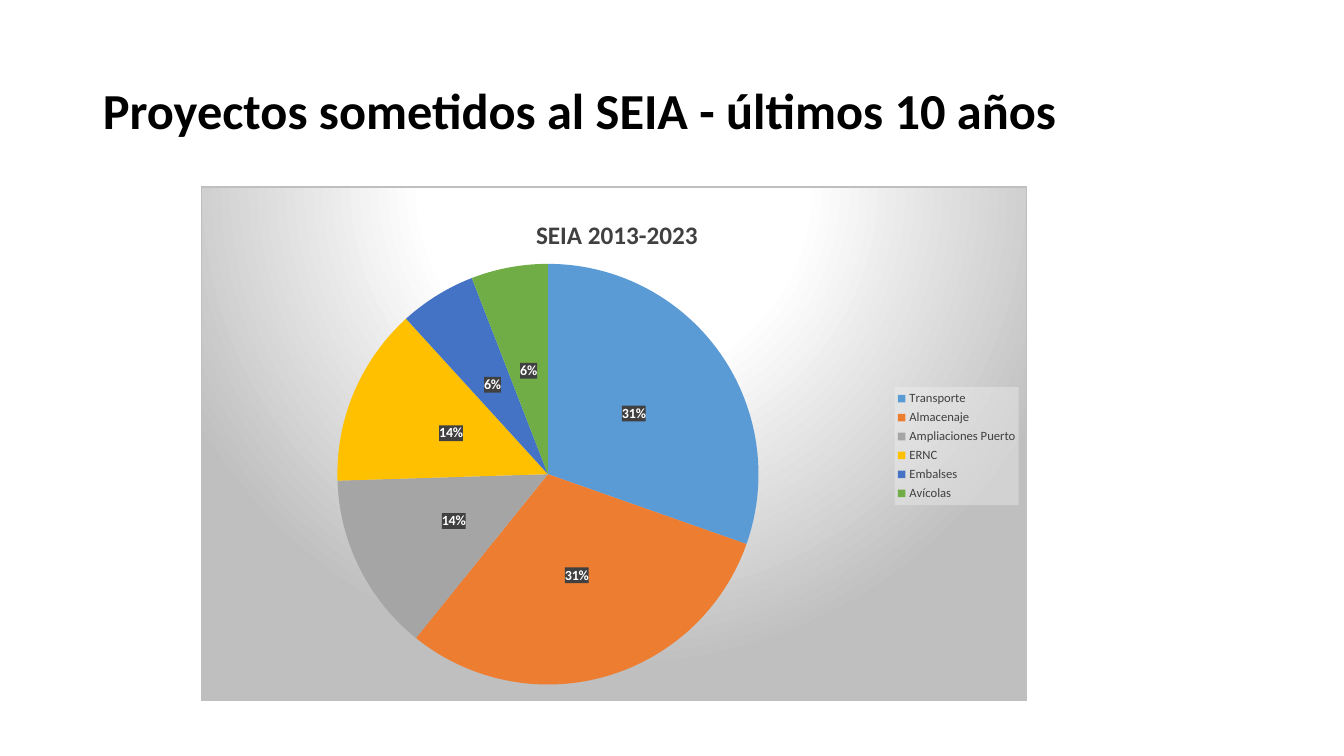
from pptx import Presentation
from pptx.chart.data import CategoryChartData
from pptx.dml.color import RGBColor
from pptx.enum.chart import XL_CHART_TYPE, XL_LABEL_POSITION, XL_LEGEND_POSITION
from pptx.enum.text import MSO_ANCHOR, PP_ALIGN
from pptx.oxml import parse_xml
from pptx.oxml.ns import nsdecls
from pptx.util import Inches, Pt

FONT = "Calibri"
BLACK = RGBColor(0x00, 0x00, 0x00)
WHITE = RGBColor(0xFF, 0xFF, 0xFF)
DARK = RGBColor(0x40, 0x40, 0x40)
PALE = RGBColor(0xF2, 0xF2, 0xF2)
SILVER = RGBColor(0xBF, 0xBF, 0xBF)

PROJECTS = [
    ("Transporte ", 31, RGBColor(0x5B, 0x9B, 0xD5)),
    ("Almacenaje", 31, RGBColor(0xED, 0x7D, 0x31)),
    ("Ampliaciones Puerto", 14, RGBColor(0xA5, 0xA5, 0xA5)),
    ("ERNC", 14, RGBColor(0xFF, 0xC0, 0x00)),
    ("Embalses", 6, RGBColor(0x44, 0x72, 0xC4)),
    ("Avícolas", 6, RGBColor(0x70, 0xAD, 0x47)),
]


def set_font(font, size, color, bold=False):
    font.name, font.size, font.bold = FONT, Pt(size), bold
    font.color.rgb = color


def solid(color, alpha=100):
    return (f'<a:solidFill><a:srgbClr val="{color}"><a:alpha val="{alpha * 1000}"/>'
            '</a:srgbClr></a:solidFill>')


def shape_props(content):
    return parse_xml(f'<c:spPr {nsdecls("c", "a")}>{content}</c:spPr>')


def layout(x, y, w=None, h=None, inner=False):
    """Manual layout in fractions of the chart area."""
    target = '<c:layoutTarget val="inner"/>' if inner else ""
    modes = '<c:xMode val="edge"/><c:yMode val="edge"/>'
    sizes = "".join(f'<c:{k} val="{v}"/>' for k, v in zip("xywh", (x, y, w, h))
                    if v is not None)
    return parse_xml(f'<c:layout {nsdecls("c")}><c:manualLayout>{target}{modes}{sizes}'
                     '</c:manualLayout></c:layout>')


def place(parent, new_layout, after=None):
    for old in parent.xpath("./c:layout"):
        parent.remove(old)
    if after:
        parent.xpath(f"./{after}")[0].addnext(new_layout)
    else:
        parent.insert(0, new_layout)


def add_title(s, text):
    title = s.shapes.title
    title.left, title.top = Inches(0.92), Inches(0.4)
    title.width, title.height = Inches(11.5), Inches(1.45)
    tf = title.text_frame
    tf.vertical_anchor = MSO_ANCHOR.MIDDLE
    p = tf.paragraphs[0]
    p.alignment, p.line_spacing = PP_ALIGN.LEFT, 0.9
    r = p.add_run()
    r.text = text
    set_font(r.font, 36, BLACK, True)


def add_pie(s):
    data = CategoryChartData()
    data.categories = [name for name, _, _ in PROJECTS]
    data.add_series("Series 1", [share for _, share, _ in PROJECTS])
    chart = s.shapes.add_chart(XL_CHART_TYPE.PIE, Inches(1.99), Inches(1.85),
                               Inches(8.2), Inches(5.1), data).chart
    set_font(chart.font, 10, BLACK)
    plot = chart.plots[0]
    plot.vary_by_categories = True
    for i, (_, _, color) in enumerate(PROJECTS):
        fill = plot.series[0].points[i].format.fill
        fill.solid()
        fill.fore_color.rgb = color
    place(chart.element.xpath(".//c:plotArea")[0], layout(0.16, 0.15, 0.52, 0.82, True))
    return chart


def add_chart_title(chart, text):
    chart.has_title = True
    title = chart.chart_title
    title.include_in_layout = False
    r = title.text_frame.paragraphs[0].add_run()
    r.text = text
    set_font(r.font, 18, DARK, True)
    place(chart.element.xpath(".//c:title")[0], layout(0.4, 0.05), "c:tx")


def add_labels(chart):
    labels = chart.plots[0].series[0].data_labels
    labels.show_value = True
    labels.number_format, labels.number_format_is_linked = '0"%"', False
    labels.position = XL_LABEL_POSITION.CENTER
    set_font(labels.font, 10, WHITE, True)
    chart.element.xpath(".//c:ser/c:dLbls/c:numFmt")[0].addnext(shape_props(solid(DARK)))


def add_legend(chart):
    chart.has_legend = True
    legend = chart.legend
    legend.position = XL_LEGEND_POSITION.RIGHT
    legend.include_in_layout = False
    set_font(legend.font, 9, DARK)
    place(chart.element.xpath(".//c:legend")[0], layout(0.84, 0.39, 0.15, 0.23),
          "c:legendPos")
    chart.element.xpath(".//c:legend/c:overlay")[0].addnext(shape_props(solid(PALE, 39)))


def fill_background(chart):
    stops = "".join(f'<a:gs pos="{pos * 1000}"><a:srgbClr val="{color}"/></a:gs>'
                    for pos, color in ((0, WHITE), (39, WHITE), (100, SILVER)))
    gradient = (f'<a:gradFill><a:gsLst>{stops}</a:gsLst><a:path path="circle">'
                '<a:fillToRect l="50000" t="-80000" r="50000" b="180000"/></a:path></a:gradFill>')
    border = f'<a:ln w="{Pt(0.75)}">{solid(SILVER)}</a:ln>'
    chart.element.xpath("./c:chart")[0].addnext(shape_props(gradient + border))


def main():
    prs = Presentation()
    prs.slide_width, prs.slide_height = Inches(13.33), Inches(7.5)
    s = prs.slides.add_slide(prs.slide_layouts[5])
    add_title(s, "Proyectos sometidos al SEIA - últimos 10 años")
    chart = add_pie(s)
    add_chart_title(chart, "SEIA 2013-2023")
    add_labels(chart)
    add_legend(chart)
    fill_background(chart)
    prs.save("out.pptx")


if __name__ == "__main__":
    main()
